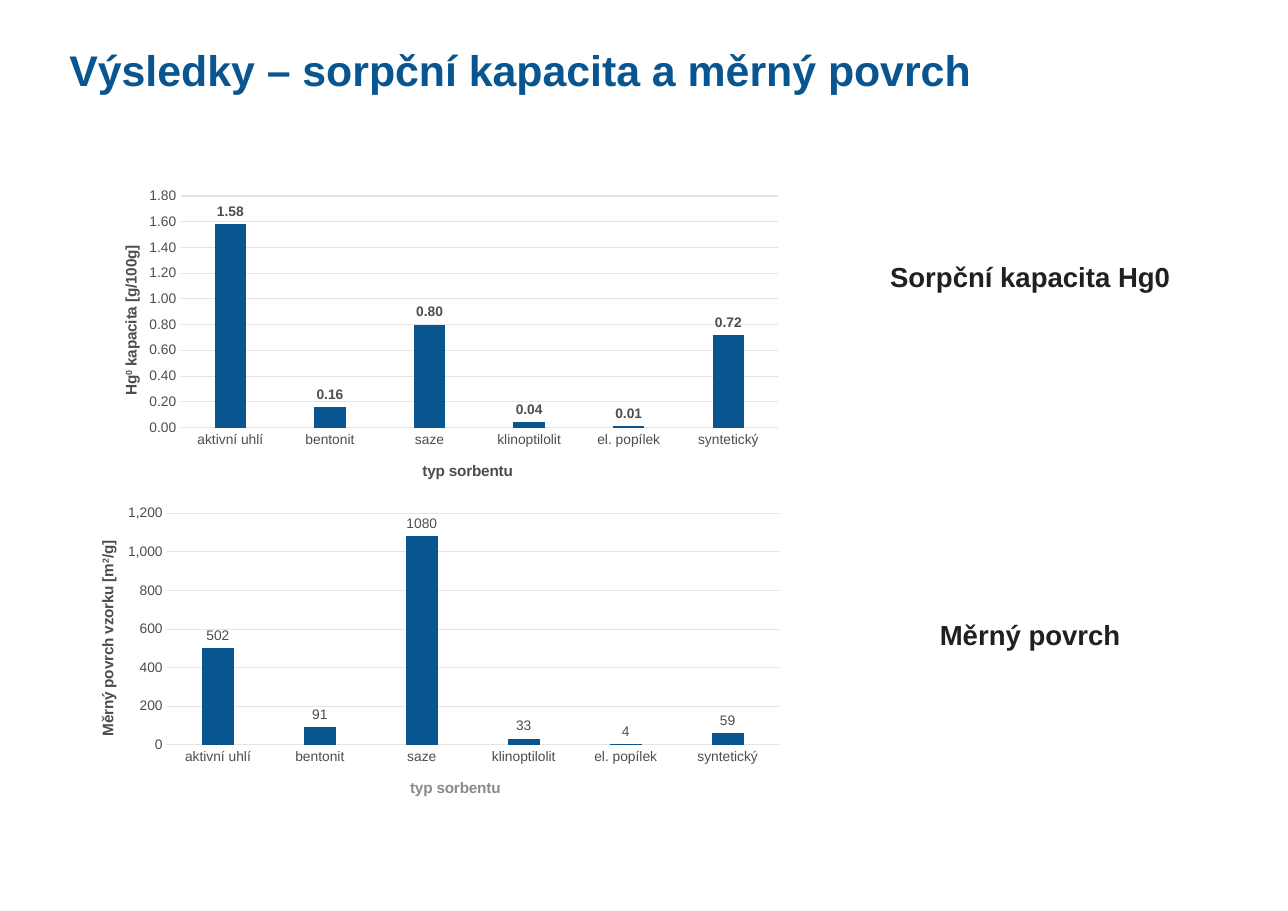
"""Build the slide on sorption capacity and specific surface of sorbents."""
from lxml import etree
from pptx import Presentation
from pptx.chart.data import CategoryChartData
from pptx.dml.color import RGBColor
from pptx.enum.chart import XL_CHART_TYPE, XL_LABEL_POSITION, XL_TICK_MARK
from pptx.enum.text import MSO_ANCHOR, PP_ALIGN
from pptx.oxml.ns import qn
from pptx.util import Pt

COLORS = {"blue": "08558F", "ink": "202020", "text": "4D4D4D", "muted": "8B8B8B", "grid": "E4E4E4"}
SORBENTS = ["aktivní uhlí", "bentonit", "saze", "klinoptilolit", "el. popílek", "syntetický"]


def style_font(font, size, color, bold=False):
    values = {"name": "Arial", "size": Pt(size), "bold": bold}
    for name, value in values.items():
        setattr(font, name, value)
    font.color.rgb = RGBColor.from_string(COLORS[color])


def place(parent, index, **fractions):
    for old in parent.findall(qn("c:layout")):
        parent.remove(old)
    layout = etree.Element(qn("c:layout"))
    manual = etree.SubElement(layout, qn("c:manualLayout"))
    settings = {"xMode": "edge", "yMode": "edge", **fractions}
    if "w" in fractions:
        settings = {"layoutTarget": "inner", **settings}
    for name, value in settings.items():
        etree.SubElement(manual, qn(f"c:{name}")).set("val", str(value))
    parent.insert(index, layout)


deck = Presentation()
deck.slide_width, deck.slide_height = Pt(841.68), Pt(595.44)
page = deck.slides.add_slide(deck.slide_layouts[6])

texts = [
    ("Výsledky – sorpční kapacita a měrný povrch", (41, 14.4, 663.1, 62.6), 28, "blue",
     PP_ALIGN.LEFT, MSO_ANCHOR.MIDDLE, (4.3, 2.2)),
    ("Měrný povrch", (528.5, 400.3, 289.4, 28.8), 18, "ink",
     PP_ALIGN.CENTER, MSO_ANCHOR.TOP, (7.2, 3.6)),
    ("Sorpční kapacita Hg0", (528.5, 166.3, 289.4, 28.8), 18, "ink",
     PP_ALIGN.CENTER, MSO_ANCHOR.TOP, (7.2, 3.6)),
]
for words, area, size, color, align, anchor, (side, edge) in texts:
    box = page.shapes.add_textbox(*map(Pt, area))
    frame_format = {
        "word_wrap": True, "vertical_anchor": anchor,
        "margin_left": Pt(side), "margin_right": Pt(side),
        "margin_top": Pt(edge), "margin_bottom": Pt(edge),
    }
    for name, value in frame_format.items():
        setattr(box.text_frame, name, value)
    para = box.text_frame.paragraphs[0]
    para.alignment = align
    span = para.add_run()
    span.text = words
    style_font(span.font, size, color, True)

charts = [
    {"area": (58.3, 118.8, 459.4, 207.4), "values": [1.58, 0.16, 0.8, 0.04, 0.01, 0.72],
     "title": ("Hg", "0", " kapacita [g/100g]"), "title_top": 0.19, "title_color": "text",
     "axis_format": "0.00", "label_format": "#,##0.00", "label_bold": True,
     "top": 1.8, "step": 0.2, "plot": (0.13, 0.85)},
    {"area": (42.5, 326.2, 475.9, 207.4), "values": [502, 91, 1080, 33, 4, 59],
     "title": ("Měrný povrch vzorku [m", "2", "/g]"), "title_top": 0.12, "title_color": "muted",
     "axis_format": "#,##0", "label_format": "0", "label_bold": False,
     "top": 1200, "step": 200, "plot": (0.14, 0.84)},
]
for item in charts:
    data = CategoryChartData()
    data.categories = SORBENTS
    data.add_series("Series 1", item["values"])
    chart = page.shapes.add_chart(
        XL_CHART_TYPE.COLUMN_CLUSTERED, *map(Pt, item["area"]), data).chart
    chart.has_legend = chart.has_title = False
    style_font(chart.font, 10, "text")

    plot = chart.plots[0]
    plot_format = {"gap_width": 219, "overlap": -27, "vary_by_categories": False, "has_data_labels": True}
    for name, value in plot_format.items():
        setattr(plot, name, value)
    fill = plot.series[0].format.fill
    fill.solid()
    fill.fore_color.rgb = RGBColor.from_string(COLORS["blue"])
    label_format = {
        "show_value": True, "position": XL_LABEL_POSITION.OUTSIDE_END,
        "number_format": item["label_format"], "number_format_is_linked": False,
    }
    for name, value in label_format.items():
        setattr(plot.data_labels, name, value)
    style_font(plot.data_labels.font, 9, "text", item["label_bold"])

    category_axis, value_axis = chart.category_axis, chart.value_axis
    value_axis.minimum_scale, value_axis.maximum_scale = 0, item["top"]
    value_axis.major_unit = item["step"]
    value_axis.has_major_gridlines = True
    value_axis.tick_labels.number_format = item["axis_format"]
    value_axis.tick_labels.number_format_is_linked = False
    value_axis.format.line.fill.background()
    for line in (category_axis.format.line, value_axis.major_gridlines.format.line):
        line.color.rgb = RGBColor.from_string(COLORS["grid"])
        line.width = Pt(0.75)

    titles = [
        (category_axis, ("typ sorbentu",), item["title_color"], 0.47, 0.87, 0),
        (value_axis, item["title"], "text", 0.035, item["title_top"], -5400000),
    ]
    for axis, pieces, color, left, top, turn in titles:
        axis.major_tick_mark = axis.minor_tick_mark = XL_TICK_MARK.NONE
        style_font(axis.tick_labels.font, 9, "text")
        frame = axis.axis_title.text_frame
        for position, words in enumerate(pieces):
            span = frame.paragraphs[0].add_run()
            span.text = words
            style_font(span.font, 10, color, True)
            if position == 1:
                span._r.get_or_add_rPr().set("baseline", "30000")
        body = frame._txBody.find(qn("a:bodyPr"))
        body.set("rot", str(turn))
        body.set("vert", "horz")
        place(axis.axis_title._element, 1, x=round(left, 2), y=top)

    plot_left, plot_width = item["plot"]
    plot_area = chart._chartSpace.find(f"{qn('c:chart')}/{qn('c:plotArea')}")
    place(plot_area, 0, x=plot_left, y=0.045, w=plot_width, h=0.73)

deck.save("out.pptx")
